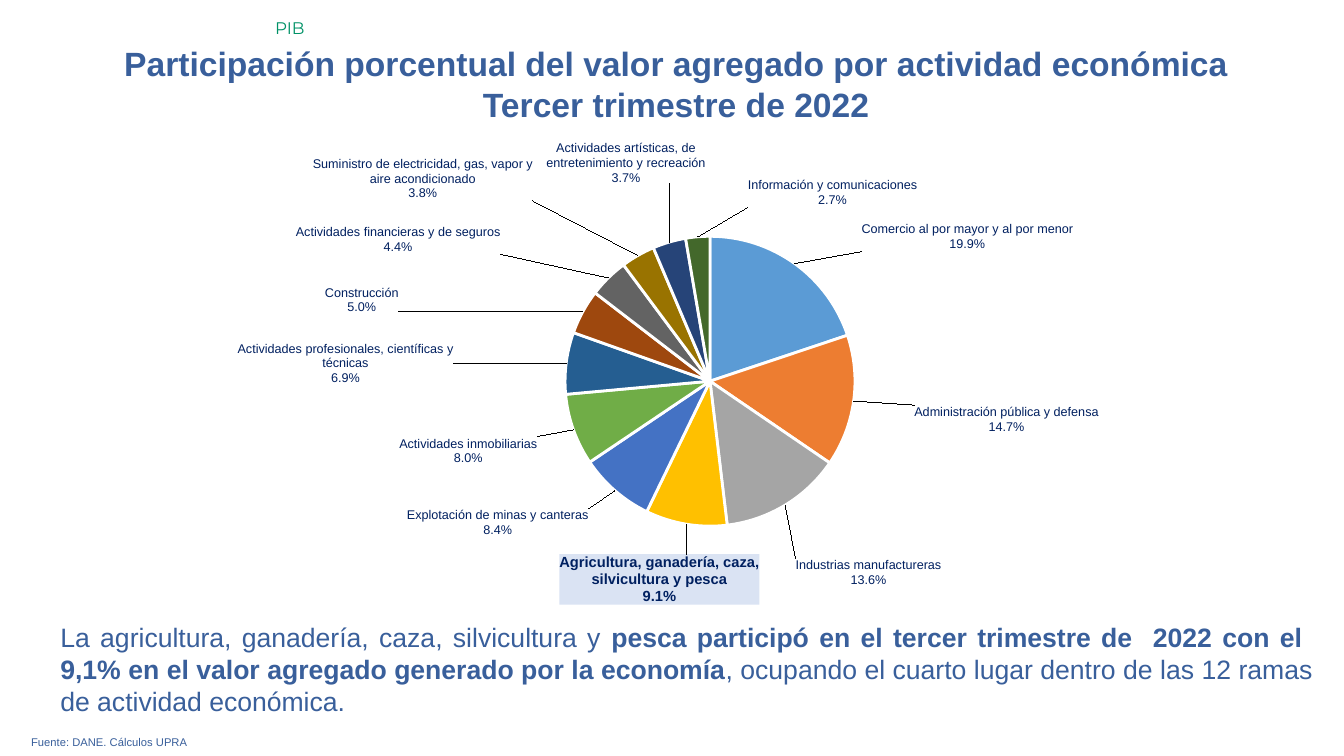
from math import cos, radians, sin

from lxml.etree import SubElement
from pptx import Presentation
from pptx.chart.data import CategoryChartData
from pptx.dml.color import RGBColor
from pptx.enum.chart import XL_CHART_TYPE, XL_LABEL_POSITION
from pptx.enum.text import PP_ALIGN
from pptx.oxml.ns import qn
from pptx.util import Inches, Pt

BLUE, NAVY, GREEN = "395F9B", "002060", "009267"


def color(hex_code):
    return RGBColor.from_string(hex_code)


def add_layout(parent, place, **settings):
    """Put a manual chart layout at the given child place of parent."""
    layout = SubElement(parent, qn("c:layout"))
    manual = SubElement(layout, qn("c:manualLayout"))
    for tag, value in settings.items():
        SubElement(manual, qn(f"c:{tag}")).set("val", str(value))
    parent.insert(place, layout)


deck = Presentation()
deck.slide_width, deck.slide_height = Inches(13.33), Inches(7.5)
page = deck.slides.add_slide(deck.slide_layouts[6])

# Text boxes: place, size, font, color, alignment, paragraphs of (text, bold) runs
text_boxes = [
    ((0.45, 0.38, 12.51, 0.91), 24, "Arial", BLUE, PP_ALIGN.CENTER, [
        [("Participación porcentual del valor agregado por actividad económica", True)],
        [("Tercer trimestre de 2022", True)]]),
    ((0.21, 7.25, 12.91, 0.24), 8, "Arial", BLUE, PP_ALIGN.JUSTIFY, [
        [("Fuente: DANE. Cálculos UPRA", False)]]),
    ((0, 6.11, 13.12, 1.06), 19, "Arial", BLUE, PP_ALIGN.JUSTIFY, [
        [("La agricultura, ganadería, caza, silvicultura y ", False),
         ("pesca participó en el tercer trimestre de  2022 con el  9,1% en el valor "
          "agregado generado por la economía", True),
         (", ocupando el cuarto lugar dentro de las 12 ramas de actividad económica.", False)]]),
    ((2.63, 0.13, 10.7, 0.3), 12, "Montserrat", GREEN, PP_ALIGN.LEFT, [
        [("PIB", False)]]),
]
for place, size, font, text_color, alignment, paragraphs in text_boxes:
    box = page.shapes.add_textbox(*[Inches(length) for length in place])
    frame = box.text_frame
    frame.word_wrap = True
    for number, runs in enumerate(paragraphs):
        para = frame.add_paragraph() if number else frame.paragraphs[0]
        para.alignment = alignment
        if size == 19:
            para.level = 1
            para._p.get_or_add_pPr().set("marL", str(Inches(0.5)))
            para._p.get_or_add_pPr().set("indent", "0")
        for text, bold in runs:
            span = para.add_run()
            span.text = text
            span.font.size, span.font.name, span.font.bold = Pt(size), font, bold
            span.font.color.rgb = color(text_color)

# Activities: name, share, slice color, label place (left, top, width, height)
activities = [
    ("Comercio al por mayor y al por menor", 19.9, "5B9BD5", (8.51, 2.25, 2.1, 0.29)),
    ("Administración pública y defensa", 14.7, "ED7D31", (9.01, 4.01, 1.83, 0.29)),
    ("Industrias manufactureras", 13.6, "A5A5A5", (7.86, 5.49, 1.45, 0.29)),
    ("Agricultura, ganadería, caza, silvicultura y pesca", 9.1, "FFC000", (5.56, 5.44, 1.98, 0.5)),
    ("Explotación de minas y canteras", 8.4, "4472C4", (4.07, 5, 1.8, 0.29)),
    ("Actividades inmobiliarias", 8, "70AD47", (4.01, 4.31, 1.37, 0.29)),
    ("Actividades profesionales, científicas y técnicas", 6.9, "255E91", (2.41, 3.4, 2.14, 0.43)),
    ("Construcción", 5, "9E480E", (3.27, 2.86, 0.73, 0.29)),
    ("Actividades financieras y de seguros", 4.4, "636363", (2.97, 2.27, 2.03, 0.29)),
    ("Suministro de electricidad, gas, vapor y aire acondicionado", 3.8, "997300",
     (3.12, 1.61, 2.19, 0.43)),
    ("Actividades artísticas, de entretenimiento y recreación", 3.7, "264478",
     (5.43, 1.44, 1.58, 0.43)),
    ("Información y comunicaciones", 2.7, "43682B", (7.42, 1.82, 1.68, 0.29)),
]
chart_left, chart_top, chart_width, chart_height = 1.11, 1.4, 11.12, 4.7
center_x, center_y, radius = 7.04, 3.78, 1.44

shares = CategoryChartData(number_format="0.0")
shares.categories = [name for name, *_ in activities]
shares.add_series("Series 1", [share for _, share, *_ in activities])
chart = page.shapes.add_chart(
    XL_CHART_TYPE.PIE, Inches(chart_left), Inches(chart_top),
    Inches(chart_width), Inches(chart_height), shares).chart
chart.has_title = chart.has_legend = False
chart.font.name, chart.font.size = "Arial", Pt(9)
chart.font.color.rgb = color(NAVY)
plot = chart.plots[0]
plot.vary_by_categories = True
plot_area = plot._element.getparent()
for old_layout in plot_area.findall(qn("c:layout")):
    plot_area.remove(old_layout)
add_layout(plot_area, 0, layoutTarget="inner", xMode="edge", yMode="edge",
           x=0.184, y=0.201, w=0.699, h=0.612)

series = plot.series[0]
labels = series.data_labels
labels.number_format, labels.number_format_is_linked = "0.0%", False
labels.position = XL_LABEL_POSITION.OUTSIDE_END
labels.show_value = False
labels.show_category_name = labels.show_percentage = True

# Each label moves from its default spot on the rim to its own place
total = sum(share for _, share, *_ in activities)
start = 0
for index, (name, share, slice_color, (left, top, width, height)) in enumerate(activities):
    point = series.points[index]
    point.format.fill.solid()
    point.format.fill.fore_color.rgb = color(slice_color)
    point.format.line.color.rgb = color("FFFFFF")
    point.format.line.width = Pt(2)

    highlighted = name.startswith("Agricultura")
    label = point.data_label
    label.font.name, label.font.bold = "Arial", highlighted
    label.font.size = Pt(10.5 if highlighted else 9)
    label.font.color.rgb = color(NAVY)
    label.position = XL_LABEL_POSITION.OUTSIDE_END

    turn = 360 * (start + share / 2) / total
    start += share
    across, up = sin(radians(turn)), cos(radians(turn))
    if min(turn, 360 - turn) <= 5:
        anchor_x = left + width / 2
    else:
        anchor_x = left if across > 0 else left + width
    anchor_y = top + height if up > 0 else top
    shift_x = (anchor_x - center_x - radius * across) / chart_width
    shift_y = (anchor_y - center_y + radius * up) / chart_height

    node = labels._element.findall(qn("c:dLbl"))[index]
    add_layout(node, 1, x=round(shift_x, 4), y=round(shift_y, 4))
    for tag, shown in (("showVal", "0"), ("showCatName", "1"), ("showPercent", "1")):
        node.find(qn(f"c:{tag}")).set("val", shown)
    SubElement(node, qn("c:separator")).text = "\n"
    if highlighted:
        look = SubElement(node, qn("c:spPr"))
        fill = SubElement(look, qn("a:solidFill"))
        SubElement(fill, qn("a:srgbClr")).set("val", "DAE3F3")
        old_look = node.find(qn("c:spPr"))
        if old_look is not look:
            node.remove(old_look)
        node.find(qn("c:txPr")).addprevious(look)

deck.save("out.pptx")
